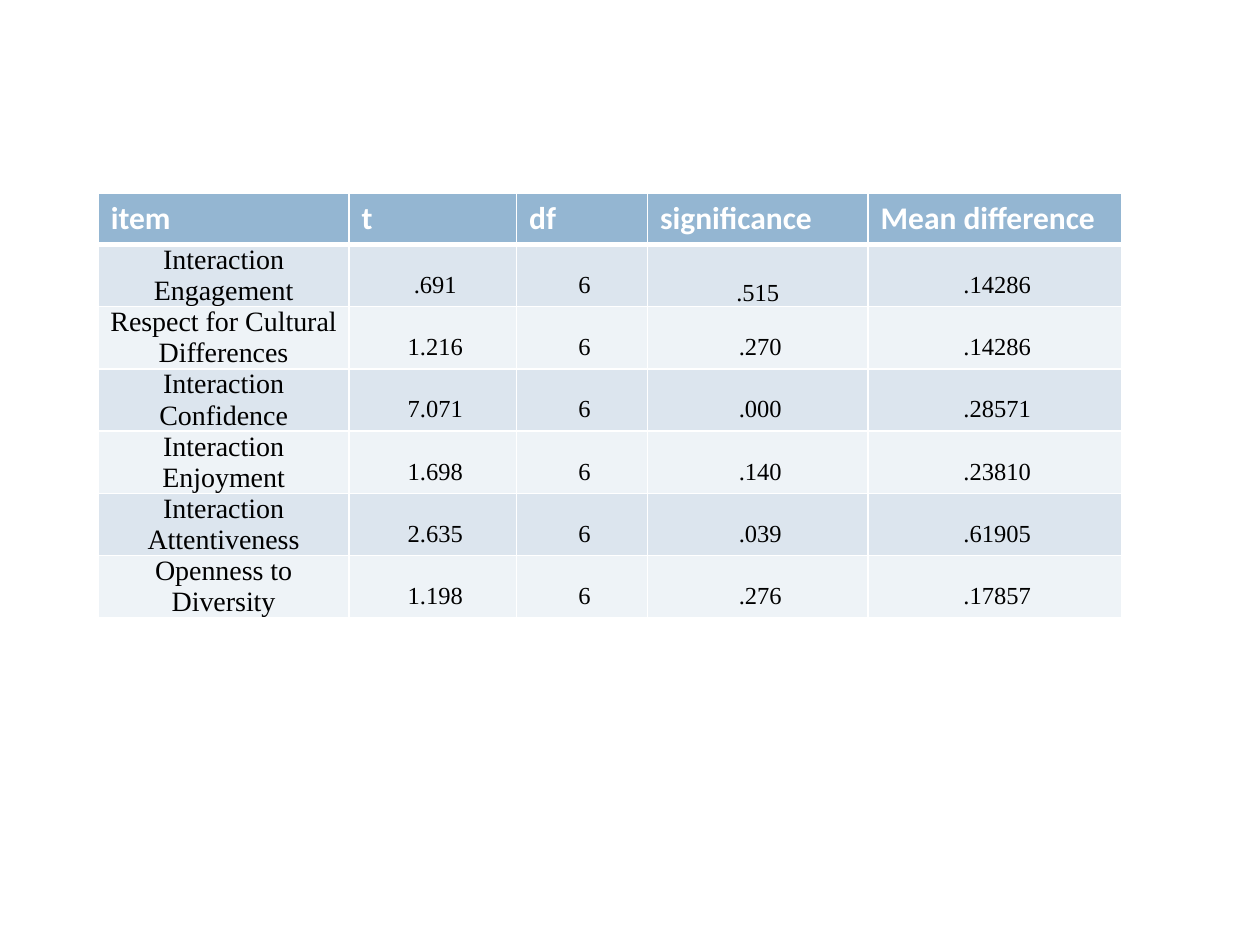
"""Build a slide with a table of t-test results for intercultural interaction items."""
from lxml import etree
from pptx import Presentation
from pptx.dml.color import RGBColor
from pptx.enum.text import MSO_ANCHOR, PP_ALIGN
from pptx.oxml.ns import qn
from pptx.util import Inches, Pt

LEFT, CENTER = PP_ALIGN.LEFT, PP_ALIGN.CENTER
TOP, BOTTOM = MSO_ANCHOR.TOP, MSO_ANCHOR.BOTTOM

THEME = {
    "header_fill": "94B6D2",
    "bands": ("DCE5EE", "EEF3F7"),
    "border": "FFFFFF",
    "header_font": {"name": "Calibri", "size": Pt(18), "bold": True},
    "item_font": {"name": "Times New Roman", "size": Pt(16), "bold": False},
    "value_font": {"name": "Times New Roman", "size": Pt(14), "bold": False},
    "header_text": "FFFFFF",
    "body_text": "000000",
}

HEADINGS = ("item", "t", "df", "significance", "Mean difference")
RESULTS = (
    ("Interaction Engagement", ".691", "6", ".515", ".14286"),
    ("Respect for Cultural Differences", "1.216", "6", ".270", ".14286"),
    ("Interaction Confidence", "7.071", "6", ".000", ".28571"),
    ("Interaction Enjoyment", "1.698", "6", ".140", ".23810"),
    ("Interaction Attentiveness", "2.635", "6", ".039", ".61905"),
    ("Openness to Diversity", "1.198", "6", ".276", ".17857"),
)
COLUMN_WIDTHS = (1.99, 1.33, 1.04, 1.75, 2.01)
ROW_HEIGHT = 0.41
SIGNIFICANCE = HEADINGS.index("significance")

BODY_MARGINS = {
    "margin_left": Inches(0.07),
    "margin_right": Inches(0.07),
    "margin_top": 0,
    "margin_bottom": 0,
}
VALUE_SPACING = {"line_spacing": 2.0, "space_after": Pt(10)}
SIGNIFICANCE_SPACING = {
    "line_spacing": 2.0,
    "space_before": Pt(0.1),
    "space_after": Pt(0.1),
}


def apply_format(target, values):
    for attribute, value in values.items():
        setattr(target, attribute, value)


def add_border(cell, side, width):
    line = etree.SubElement(cell._tc.get_or_add_tcPr(), qn(f"a:ln{side}"), w=str(Pt(width)))
    fill = etree.SubElement(line, qn("a:solidFill"))
    etree.SubElement(fill, qn("a:srgbClr"), val=THEME["border"])


presentation = Presentation()
presentation.slide_width = Inches(10)
presentation.slide_height = Inches(7.5)
slide = presentation.slides.add_slide(presentation.slide_layouts[6])

rows = (HEADINGS, *RESULTS)
results_table = slide.shapes.add_table(
    len(rows), len(HEADINGS), Inches(0.78), Inches(1.53),
    Inches(sum(COLUMN_WIDTHS)), Inches(ROW_HEIGHT * len(rows)),
).table
for column, width in zip(results_table.columns, COLUMN_WIDTHS):
    column.width = Inches(width)

for row_index, row in enumerate(rows):
    results_table.rows[row_index].height = Inches(ROW_HEIGHT)
    is_header = row_index == 0
    border_widths = {
        "L": 1,
        "R": 1,
        "T": 3 if row_index == 1 else 1,
        "B": 3 if is_header else 1,
    }
    band = THEME["header_fill"] if is_header else THEME["bands"][(row_index - 1) % 2]
    text_color = THEME["header_text"] if is_header else THEME["body_text"]

    for column_index, wording in enumerate(row):
        cell = results_table.cell(row_index, column_index)
        for side, width in border_widths.items():
            add_border(cell, side, width)
        cell.fill.solid()
        cell.fill.fore_color.rgb = RGBColor.from_string(band)
        cell.text = wording
        paragraph = cell.text_frame.paragraphs[0]
        paragraph.alignment = LEFT if is_header else CENTER
        font_format = THEME["header_font"]

        if not is_header:
            apply_format(cell, BODY_MARGINS)
            font_format = THEME["value_font"] if column_index else THEME["item_font"]
            is_significance = column_index == SIGNIFICANCE
            sits_low = is_significance and row_index == 1
            cell.vertical_anchor = BOTTOM if sits_low else TOP
            if column_index:
                apply_format(paragraph, SIGNIFICANCE_SPACING if is_significance else VALUE_SPACING)
                if not sits_low:
                    paragraph._p.get_or_add_pPr().set("marL", str(Inches(0.04)))

        font = paragraph.runs[0].font
        apply_format(font, font_format)
        font.color.rgb = RGBColor.from_string(text_color)

presentation.save("out.pptx")
